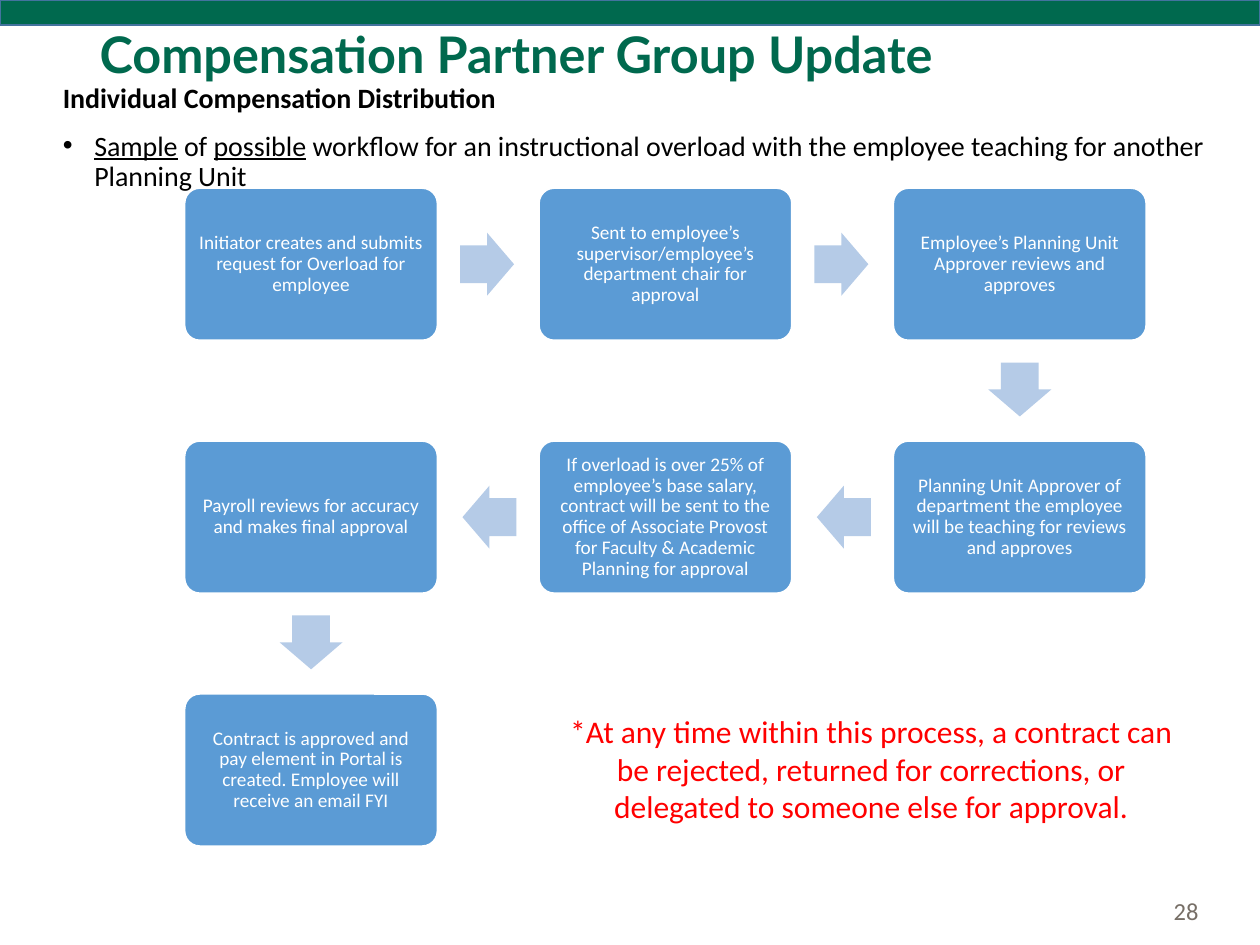
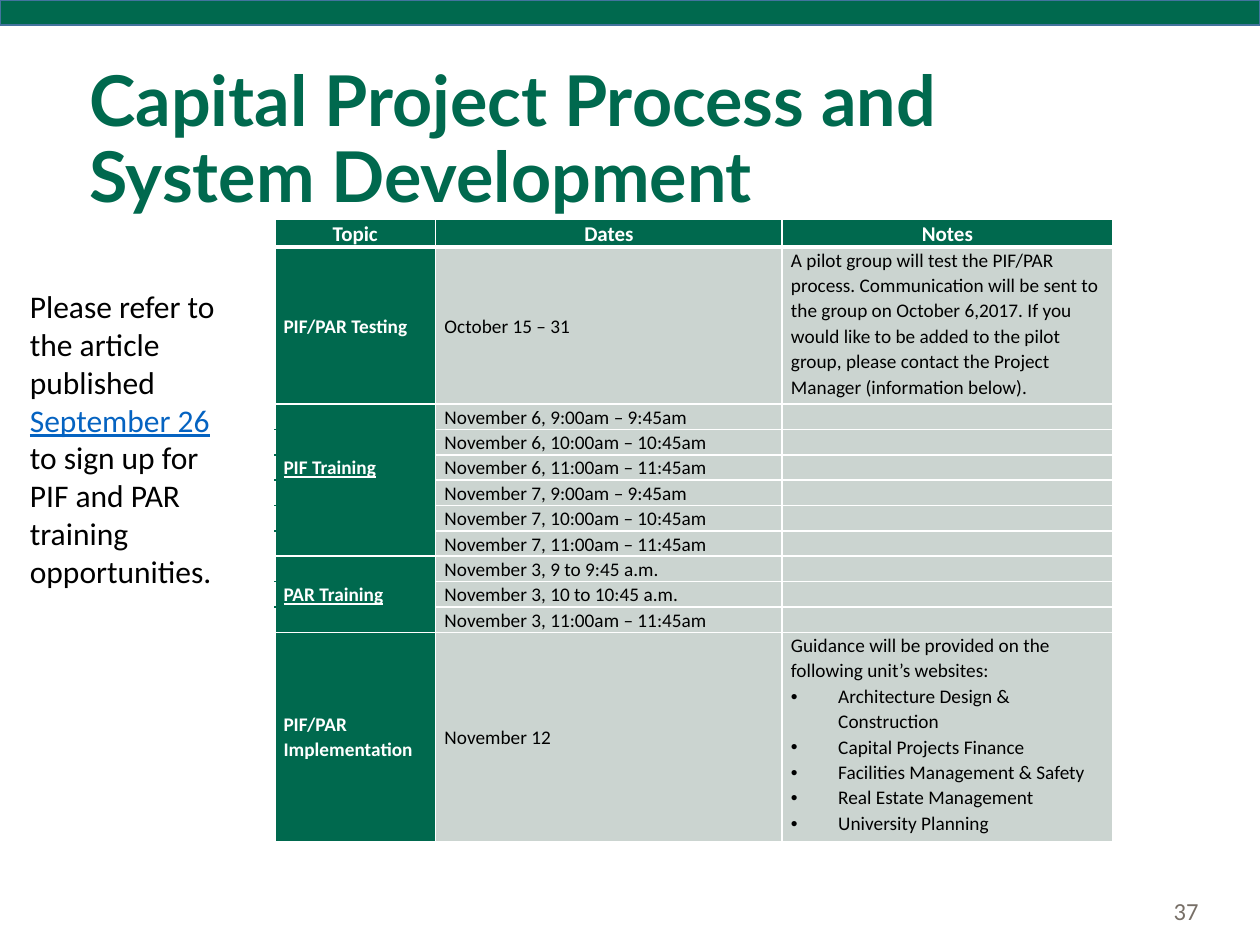
"""Build two slides: an overload approval workflow and a capital project schedule."""
import lxml.etree
import pptx
import pptx.dml.color
import pptx.enum.shapes
import pptx.enum.text
import pptx.oxml.ns
import pptx.util

Pt = pptx.util.Pt
qn = pptx.oxml.ns.qn
rgb = pptx.dml.color.RGBColor.from_string
SHAPE = pptx.enum.shapes.MSO_SHAPE
ALIGN = pptx.enum.text.PP_ALIGN
MIDDLE = pptx.enum.text.MSO_ANCHOR.MIDDLE
TOP = pptx.enum.text.MSO_ANCHOR.TOP

GREEN, WHITE, BLACK = "00694E", "FFFFFF", "000000"
BOX_BLUE, ARROW_BLUE, LINK_BLUE = "5B9BD5", "B5CBE7", "0563C1"
BAND_EDGE, PALE, GREY, RED = "43739E", "CBD4D0", "776F67", "FF0000"


def format_paragraph(paragraph, size, color, bold=False, align=ALIGN.LEFT,
                     spacing=1.0, font="Calibri", bullet_indent=0):
    """Set the layout of a paragraph and the font of its runs."""
    paragraph.alignment = align
    paragraph.line_spacing = spacing
    if bullet_indent:
        properties = paragraph._p.get_or_add_pPr()
        properties.set("marL", str(Pt(bullet_indent)))
        properties.set("indent", str(-Pt(bullet_indent)))
        lxml.etree.SubElement(properties, qn("a:buFont"), typeface="Arial")
        lxml.etree.SubElement(properties, qn("a:buChar"), char="•")
    for run in paragraph.runs:
        run.font.name = font
        run.font.size = Pt(size)
        run.font.bold = bold
        run.font.color.rgb = rgb(color)
    if not paragraph.runs:
        lxml.etree.SubElement(paragraph._p, qn("a:endParaRPr"), sz=str(size * 100))


def add_text_box(slide, left, top, width, height):
    """Add a wrapping text box and return its text frame."""
    text_frame = slide.shapes.add_textbox(Pt(left), Pt(top), Pt(width), Pt(height)).text_frame
    text_frame.word_wrap = True
    return text_frame


presentation = pptx.Presentation()
presentation.slide_width, presentation.slide_height = Pt(720), Pt(540)

slides = []
for title_text, title_place, title_size, number in [
    ("Compensation Partner Group Update", (49.7, 14.4, 534, 36.7), 28.8, "28"),
    ("Capital Project Process and System Development", (43.9, 28.8, 620.6, 104.4), 40, "37"),
]:
    slide = presentation.slides.add_slide(presentation.slide_layouts[5])
    slides.append(slide)

    band = slide.shapes.add_shape(SHAPE.RECTANGLE, 0, 0, Pt(720), Pt(14.5))
    band.shadow.inherit = False
    band.fill.solid()
    band.fill.fore_color.rgb = rgb(GREEN)
    band.line.color.rgb = rgb(BAND_EDGE)
    band.line.width = Pt(1)

    title = slide.shapes.title
    title.left, title.top, title.width, title.height = map(Pt, title_place)
    title.text_frame.text = title_text
    title.text_frame.auto_size = pptx.enum.text.MSO_AUTO_SIZE.NONE
    title.text_frame.vertical_anchor = MIDDLE
    format_paragraph(title.text_frame.paragraphs[0], title_size, GREEN, True,
                     spacing=0.9, font="Lato")

    number_frame = add_text_box(slide, 476, 506.2, 216, 28.8)
    number_frame.text = number
    number_frame.vertical_anchor = MIDDLE
    format_paragraph(number_frame.paragraphs[0], 14, GREY, align=ALIGN.RIGHT)

workflow_slide, schedule_slide = slides

intro_frame = add_text_box(workflow_slide, 28.8, 44.6, 696.2, 424)
intro_frame.text = "Individual Compensation Distribution"
format_paragraph(intro_frame.paragraphs[0], 16, BLACK, True, spacing=0.9)
sample_paragraph = intro_frame.add_paragraph()
sample_paragraph.space_before = Pt(10)
for text, underlined in [
    ("Sample", True), (" of ", False), ("possible", True),
    (" workflow for an instructional overload with the employee teaching "
     "for another Planning Unit", False),
]:
    run = sample_paragraph.add_run()
    run.text = text
    run.font.underline = underlined
format_paragraph(sample_paragraph, 16, BLACK, spacing=0.9, bullet_indent=18)

steps = [
    (0, 0, "Initiator creates and submits request for Overload for employee"),
    (1, 0, "Sent to employee’s supervisor/employee’s department chair for approval"),
    (2, 0, "Employee’s Planning Unit Approver reviews and approves"),
    (2, 1, "Planning Unit Approver of department the employee will be teaching for "
           "reviews and approves"),
    (1, 1, "If overload is over 25% of employee’s base salary, contract will be sent to the "
           "office of Associate Provost for Faculty & Academic Planning for approval"),
    (0, 1, "Payroll reviews for accuracy and makes final approval"),
    (0, 2, "Contract is approved and pay element in Portal is created. "
           "Employee will receive an email FYI"),
]
FIRST_LEFT, FIRST_TOP = 105.5, 107.5
COLUMN_PITCH, ROW_PITCH = 202.5, 144.5
BOX_WIDTH, BOX_HEIGHT = 144.5, 87
ARROW_WIDTH, ARROW_HEIGHT, ARROW_SETBACK = 30.8, 36, 0.7

for column, row, text in steps:
    box = workflow_slide.shapes.add_shape(
        SHAPE.ROUNDED_RECTANGLE,
        Pt(FIRST_LEFT + column * COLUMN_PITCH), Pt(FIRST_TOP + row * ROW_PITCH),
        Pt(BOX_WIDTH), Pt(BOX_HEIGHT))
    box.adjustments[0] = 0.1
    box.shadow.inherit = False
    box.fill.solid()
    box.fill.fore_color.rgb = rgb(BOX_BLUE)
    box.line.color.rgb = rgb(WHITE)
    box.line.width = Pt(1)
    text_frame = box.text_frame
    text_frame.text = text
    text_frame.word_wrap = True
    text_frame.vertical_anchor = MIDDLE
    text_frame.margin_left = text_frame.margin_right = Pt(5)
    text_frame.margin_top = text_frame.margin_bottom = Pt(5)
    format_paragraph(text_frame.paragraphs[0], 11, WHITE, align=ALIGN.CENTER, spacing=0.9)

for (column, row, _), (next_column, next_row, _) in zip(steps, steps[1:]):
    across, down = next_column - column, next_row - row
    center_x = (FIRST_LEFT + BOX_WIDTH / 2 + (column + across / 2) * COLUMN_PITCH
                - across * ARROW_SETBACK)
    center_y = (FIRST_TOP + BOX_HEIGHT / 2 + (row + down / 2) * ROW_PITCH
                - down * ARROW_SETBACK)
    arrow = workflow_slide.shapes.add_shape(
        SHAPE.RIGHT_ARROW, Pt(center_x - ARROW_WIDTH / 2), Pt(center_y - ARROW_HEIGHT / 2),
        Pt(ARROW_WIDTH), Pt(ARROW_HEIGHT))
    arrow.adjustments[0], arrow.adjustments[1] = 0.6, 0.5
    arrow.rotation = 90 if down else 90 - 90 * across
    arrow.shadow.inherit = False
    arrow.fill.solid()
    arrow.fill.fore_color.rgb = rgb(ARROW_BLUE)
    arrow.line.fill.background()

note_frame = add_text_box(workflow_slide, 316.8, 403.2, 362.2, 72.7)
note_frame.text = ("*At any time within this process, a contract can be rejected, "
                   "returned for corrections, or delegated to someone else for approval.")
format_paragraph(note_frame.paragraphs[0], 18, RED, align=ALIGN.CENTER)

schedule = [
    ("Topic", "Dates", "Notes"),
    ("PIF/PAR Testing", "October 15 – 31",
     "A pilot group will test the PIF/PAR process. Communication will be sent to the group on "
     "October 6,2017. If you would like to be added to the pilot group, please contact the "
     "Project Manager (information below)."),
    ("", "November 6, 9:00am – 9:45am", ""),
    ("", "November 6, 10:00am – 10:45am", ""),
    ("PIF Training", "November 6, 11:00am – 11:45am", ""),
    ("", "November 7, 9:00am – 9:45am", ""),
    ("", "November 7, 10:00am – 10:45am", ""),
    ("", "November 7, 11:00am – 11:45am", ""),
    ("", "November 3, 9 to 9:45 a.m.", ""),
    ("PAR Training", "November 3, 10 to 10:45 a.m.", ""),
    ("", "November 3, 11:00am – 11:45am", ""),
    ("PIF/PAR Implementation", "November 12",
     "Guidance will be provided on the following unit’s websites:\n"
     "Architecture Design & Construction\nCapital Projects Finance\n"
     "Facilities Management & Safety\nReal Estate Management\nUniversity Planning"),
]
LAST_ROW = len(schedule) - 1
JOINED_BELOW = {2, 3, 4, 5, 6, 8, 9}
column_widths = [92, 198, 188.8]
row_heights = [15.7, 89.8] + [14.5] * 9 + [119.5]

table = schedule_slide.shapes.add_table(
    len(schedule), 3, Pt(157), Pt(125.5), Pt(sum(column_widths)), Pt(sum(row_heights))).table
table.horz_banding = False
for column, width in zip(table.columns, column_widths):
    column.width = Pt(width)
for row, height in zip(table.rows, row_heights):
    row.height = Pt(height)

for row_index, row_texts in enumerate(schedule):
    for column_index, text in enumerate(row_texts):
        is_header, is_topic = row_index == 0, column_index == 0
        is_green = is_header or is_topic
        cell = table.cell(row_index, column_index)
        cell.text = text
        cell.margin_left = cell.margin_right = Pt(5)
        cell.margin_top = cell.margin_bottom = 0
        is_centered = is_green or (column_index == 1 and row_index in (1, LAST_ROW))
        cell.vertical_anchor = MIDDLE if is_centered else TOP

        top_color = GREEN if is_topic and row_index - 1 in JOINED_BELOW else WHITE
        bottom_color = GREEN if is_topic and row_index in JOINED_BELOW else WHITE
        for side, color, width in [
            ("L", WHITE, 1), ("R", WHITE, 1),
            ("T", top_color, 3 if row_index == 1 else 1),
            ("B", bottom_color, 3 if is_header else 1),
        ]:
            border = lxml.etree.SubElement(
                cell._tc.get_or_add_tcPr(), qn("a:ln" + side), w=str(Pt(width)))
            border_fill = lxml.etree.SubElement(border, qn("a:solidFill"))
            lxml.etree.SubElement(border_fill, qn("a:srgbClr"), val=color)
        cell.fill.solid()
        cell.fill.fore_color.rgb = rgb(GREEN if is_green else PALE)

        for paragraph_index, paragraph in enumerate(cell.text_frame.paragraphs):
            format_paragraph(
                paragraph, 12 if is_header else 11, WHITE if is_green else BLACK, is_green,
                ALIGN.CENTER if is_header else ALIGN.LEFT, 1.07,
                bullet_indent=27 if paragraph_index else 0)
            for run in paragraph.runs:
                run.font.underline = text in ("PIF Training", "PAR Training")

article_paragraph = add_text_box(schedule_slide, 10, 160.6, 129.6, 181.4).paragraphs[0]
for text in ("Please refer to the article published ", "September 26 ",
             "to sign up for PIF and PAR training opportunities."):
    article_paragraph.add_run().text = text
format_paragraph(article_paragraph, 18, BLACK)
date_font = article_paragraph.runs[1].font
date_font.color.rgb = rgb(LINK_BLUE)
date_font.underline = True

presentation.save("out.pptx")
